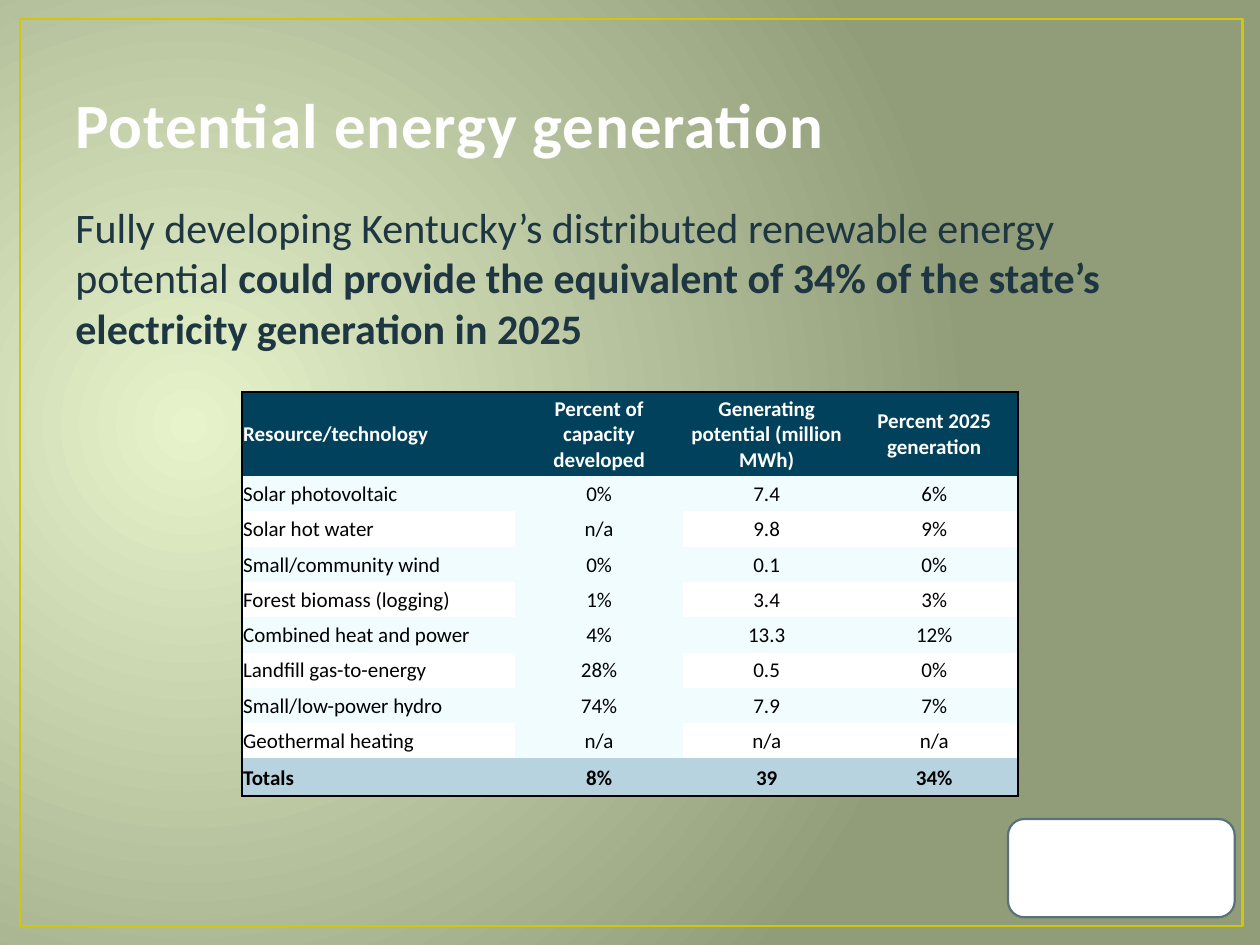
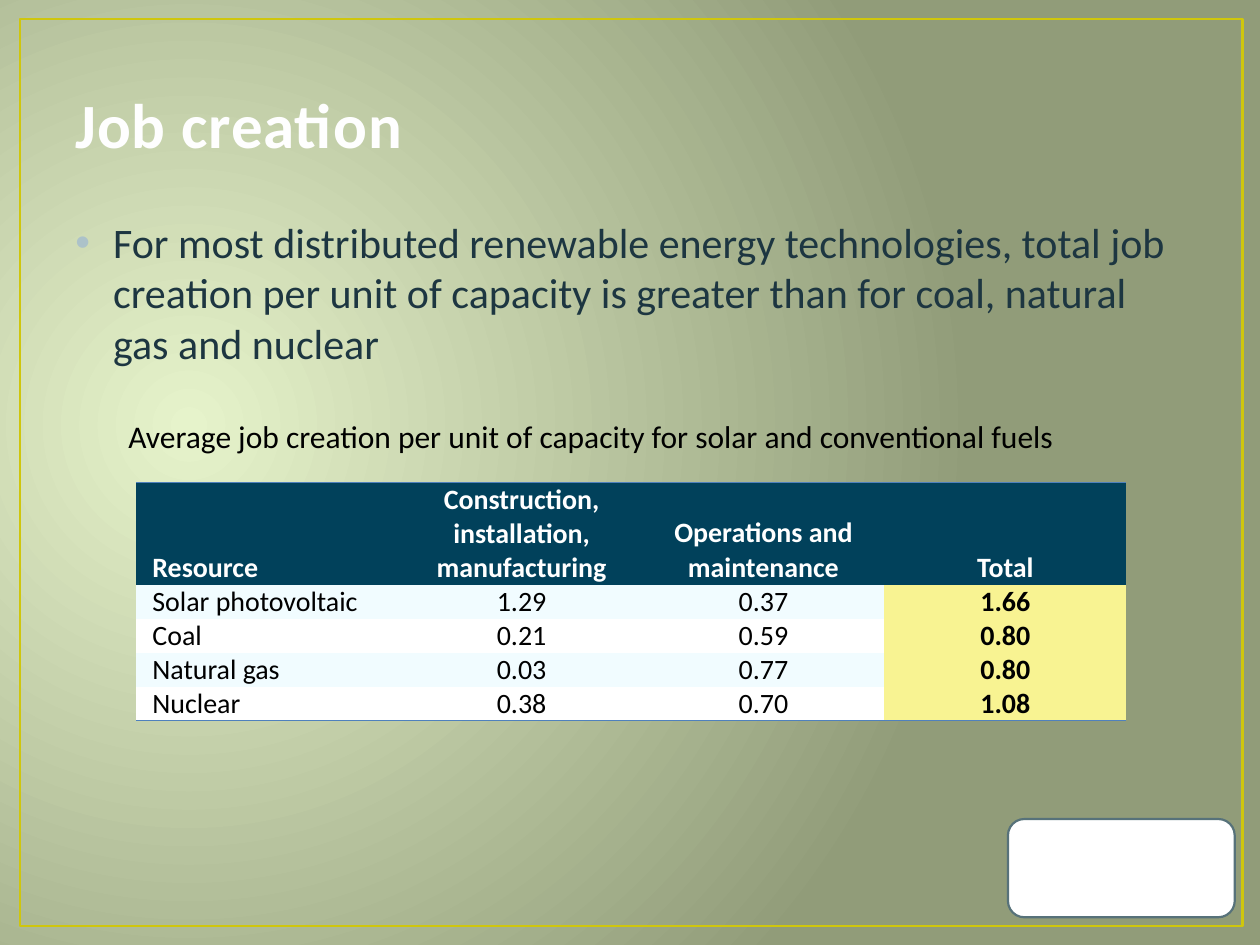
from dataclasses import dataclass
from typing import Callable

from pptx import Presentation
from pptx.dml.color import RGBColor as Rgb
from pptx.enum.shapes import MSO_SHAPE as Kind
from pptx.enum.text import MSO_ANCHOR as Anchor, PP_ALIGN as Align
from pptx.oxml import parse_xml
from pptx.oxml.ns import nsdecls
from pptx.util import Inches, Pt

FONT = "Calibri"
HEX = {
    "glow": "E6F3CB", "moss": "919C79", "frame": "CFC60D", "edge": "57727A",
    "title": "FEFEFE", "outline": "384F55", "body": "1D3641", "bullet": "ACC2C9",
    "white": "FFFFFF", "black": "000000", "head": "01415B", "pale": "F1FCFF",
    "sum": "B7D3DF", "gold": "F8F392", "rule": "4F81BD",
}
PLAIN = "{2D5ABB26-0587-4C30-8999-92F81FD0307C}"  # table style without grid


@dataclass
class Grid:
    left: float
    top: float
    cols: list[float]
    rows: list[float]
    data: list[list[str]]
    size: int
    inset: tuple[float, float, float, float]
    head: Anchor
    sides: str
    rule: str
    tint: Callable[[int, int], str]
    bold: Callable[[int, int], bool]
    after: float = 0


def rgb(name: str) -> Rgb:
    return Rgb.from_string(HEX[name])


def solid(name: str) -> str:
    return f'<a:solidFill><a:srgbClr val="{HEX[name]}"/></a:solidFill>'


def node(xml: str):
    """Parse one drawing element, adding the namespace to its tag."""
    tag, rest = xml.split(" ", 1)
    return parse_xml(f"{tag} {nsdecls('a')} {rest}")


# Text
def write(frame, *runs, size=24, color="body", bold=False, align=Align.LEFT,
          anchor=Anchor.TOP, inset=(0.1, 0.05, 0.1, 0.05), after=0,
          bullet=False, outline=False) -> None:
    """Each run is a string, or a pair of string and bold."""
    frame.word_wrap = True
    frame.vertical_anchor = anchor
    (frame.margin_left, frame.margin_top,
     frame.margin_right, frame.margin_bottom) = map(Inches, inset)
    para = frame.paragraphs[0]
    para.alignment = align
    if after:
        para.space_after = Pt(after)
    if bullet:
        props = para._p.get_or_add_pPr()
        props.set("marL", str(Inches(0.3)))
        props.set("indent", str(-Inches(0.3)))
        for xml in ('<a:spcBef ><a:spcPct val="20000"/></a:spcBef>',
                    f'<a:buClr ><a:srgbClr val="{HEX["bullet"]}"/></a:buClr>',
                    '<a:buFont typeface="Arial"/>', '<a:buChar char="•"/>'):
            props.append(node(xml))
    for part in runs:
        text, heavy = (part, bold) if isinstance(part, str) else part
        run = para.add_run()
        run.text = text
        font = run.font
        font.name, font.size, font.bold = FONT, Pt(size), heavy
        font.color.rgb = rgb(color)
        if outline:
            props = run._r.get_or_add_rPr()
            props.set("spc", "50")
            props.insert(0, node(f'<a:ln w="{Pt(1.05)}">{solid("outline")}</a:ln>'))


def label(slide, left: float, top: float, width: float, height: float,
          *runs, **style) -> None:
    box = slide.shapes.add_textbox(*map(Inches, (left, top, width, height)))
    write(box.text_frame, *runs, **style)


# Shapes
def panel(slide, kind: Kind, left: float, top: float, width: float,
          height: float, line: str, weight: float, fill: str = "") -> None:
    shape = slide.shapes.add_shape(kind, *map(Inches, (left, top, width, height)))
    shape.shadow.inherit = False
    if fill:
        shape.fill.solid()
        shape.fill.fore_color.rgb = rgb(fill)
    else:
        shape.fill.background()
    shape.line.color.rgb = rgb(line)
    shape.line.width = Pt(weight)


def badge(slide) -> None:
    panel(slide, Kind.ROUNDED_RECTANGLE, 8, 6.5, 1.8, 0.78, "edge", 1.25, "white")


# Tables
def border(cell, sides: str, color: str) -> None:
    props = cell._tc.get_or_add_tcPr()
    for i, side in enumerate(sides):
        props.insert(i, node(f'<a:ln{side} w="{Pt(1)}">{solid(color)}</a:ln{side}>'))


def draw(slide, grid: Grid) -> None:
    count, width = len(grid.rows), len(grid.cols)
    frame = slide.shapes.add_table(
        count, width, Inches(grid.left), Inches(grid.top),
        Inches(sum(grid.cols)), Inches(sum(grid.rows)))
    table = frame.table
    table.first_row = table.horz_banding = False
    table._tbl.tblPr.find("{*}tableStyleId").text = PLAIN
    for col, size in zip(table.columns, grid.cols):
        col.width = Inches(size)
    for row, size in zip(table.rows, grid.rows):
        row.height = Inches(size)
    for r, line in enumerate(grid.data):
        for c, text in enumerate(line):
            cell = table.cell(r, c)
            write(cell.text_frame, text, size=grid.size,
                  color="black" if r else "white", bold=grid.bold(r, c),
                  align=Align.CENTER if c else Align.LEFT, after=grid.after)
            cell.vertical_anchor = Anchor.MIDDLE if r else grid.head
            (cell.margin_left, cell.margin_top,
             cell.margin_right, cell.margin_bottom) = map(Inches, grid.inset)
            cell.fill.solid()
            cell.fill.fore_color.rgb = rgb(grid.tint(r, c))
            outer = {"L": c == 0, "R": c == width - 1,
                     "T": r == 0, "B": r == count - 1}
            border(cell, "".join(s for s in grid.sides if outer[s]), grid.rule)


def band(row: int) -> str:
    return "pale" if row % 2 else "white"


def power_tint(row: int, col: int) -> str:
    if row in (0, 9):
        return "sum" if row else "head"
    return "pale" if col == 1 else band(row)


def jobs_tint(row: int, col: int) -> str:
    if row == 0:
        return "head"
    return "gold" if col == 3 else band(row)


POWER = Grid(
    1.92, 3.11, [2.17] + [1.33] * 3, [0.67] + [0.28] * 8 + [0.3],
    [["Resource/technology", "Percent of capacity developed",
      "Generating potential (million MWh)", "Percent 2025 generation"],
     ["Solar photovoltaic", "0%", "7.4", "6%"],
     ["Solar hot water", "n/a", "9.8", "9%"],
     ["Small/community wind", "0%", "0.1", "0%"],
     ["Forest biomass (logging)", "1%", "3.4", "3%"],
     ["Combined heat and power", "4%", "13.3", "12%"],
     ["Landfill gas-to-energy", "28%", "0.5", "0%"],
     ["Small/low-power hydro", "74%", "7.9", "7%"],
     ["Geothermal heating", "n/a", "n/a", "n/a"],
     ["Totals", "8%", "39", "34%"]],
    size=12, inset=(0.01, 0.01, 0.01, 0), head=Anchor.MIDDLE, sides="LRTB",
    rule="black", tint=power_tint, bold=lambda row, col: row in (0, 9))

JOBS = Grid(
    1.08, 3.83, [2.1] + [1.92] * 3, [0.81] + [0.27] * 4,
    [["Resource", "Construction, installation, manufacturing",
      "Operations and maintenance", "Total"],
     ["Solar photovoltaic", "1.29", "0.37", "1.66"],
     ["Coal", "0.21", "0.59", "0.80"],
     ["Natural gas", "0.03", "0.77", "0.80"],
     ["Nuclear", "0.38", "0.70", "1.08"]],
    size=16, inset=(0.13, 0, 0.13, 0), head=Anchor.BOTTOM, sides="TB",
    rule="rule", tint=jobs_tint, bold=lambda row, col: row == 0 or col == 3,
    after=2)


# Shared base: glow background, frame and title
def start(deck, title: str):
    slide = deck.slides.add_slide(deck.slide_layouts[6])
    stops = "".join(f'<a:gs pos="{pos}"><a:srgbClr val="{HEX[name]}"/></a:gs>'
                    for pos, name in ((0, "glow"), (100000, "moss")))
    slide._element.cSld.insert(0, parse_xml(
        f'<p:bg {nsdecls("p", "a")}><p:bgPr><a:gradFill rotWithShape="1">'
        f'<a:gsLst>{stops}</a:gsLst><a:path path="circle">'
        '<a:fillToRect l="15000" t="50000" r="85000" b="60000"/></a:path>'
        '</a:gradFill><a:effectLst/></p:bgPr></p:bg>'))
    panel(slide, Kind.RECTANGLE, 0.16, 0.15, 9.7, 7.2, "frame", 1.5)
    label(slide, 0.5, 0.3, 9, 1.03, title, size=36, color="title", bold=True,
          anchor=Anchor.BOTTOM, outline=True)
    return slide


def main() -> None:
    deck = Presentation()
    deck.slide_width, deck.slide_height = Inches(10), Inches(7.5)

    # Energy potential
    slide = start(deck, "Potential energy generation")
    label(slide, 0.5, 1.55, 9, 4.95,
          "Fully developing Kentucky’s distributed renewable energy potential ",
          ("could provide the equivalent of 34% of the state’s electricity "
           "generation in 2025", True))
    badge(slide)
    draw(slide, POWER)

    # Jobs
    slide = start(deck, "Job creation")
    label(slide, 0.5, 1.67, 9, 1.5,
          "For most distributed renewable energy technologies, total job creation "
          "per unit of capacity is greater than for coal, natural gas and nuclear",
          bullet=True)
    draw(slide, JOBS)
    badge(slide)
    label(slide, 0.92, 3.26, 8.17, 0.4,
          "Average job creation per unit of capacity for solar and conventional fuels",
          size=18, color="black")

    deck.save("out.pptx")


if __name__ == "__main__":
    main()
